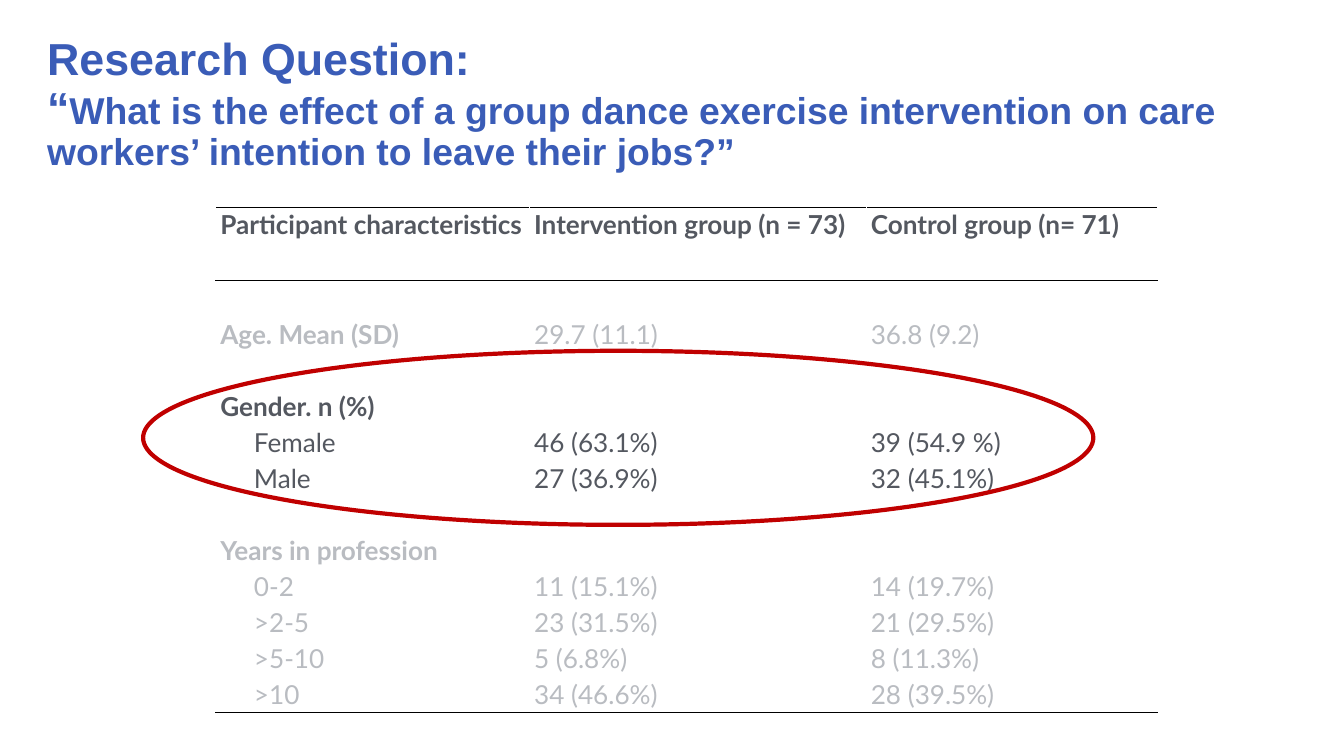
from dataclasses import dataclass

from lxml.etree import SubElement
from pptx import Presentation
from pptx.dml.color import RGBColor
from pptx.enum.shapes import MSO_SHAPE
from pptx.enum.text import MSO_ANCHOR, MSO_AUTO_SIZE, PP_ALIGN
from pptx.oxml.ns import qn
from pptx.util import Inches, Pt

BLUE = RGBColor(0x3A, 0x5C, 0xB7)
DARK = RGBColor(0x54, 0x58, 0x60)
FADED = RGBColor(0xB9, 0xBC, 0xC1)
RED = RGBColor(0xC0, 0x00, 0x00)
BLACK = RGBColor(0x00, 0x00, 0x00)

COL_WIDTHS = (4.67, 5.01, 4.33)
HEADER_HEIGHT, ROW_HEIGHT = 1.09, 0.536


@dataclass
class Row:
    label: str = ""
    intervention: str = ""
    control: str = ""
    color: RGBColor = FADED
    heading: bool = False
    indent: float = 0


ROWS = [
    Row("Participant characteristics", "Intervention group (n = 73)",
        "Control group (n= 71)", DARK, True),
    Row(),
    Row("Age. Mean (SD)", "29.7 (11.1)", "36.8 (9.2)", heading=True),
    Row(),
    Row("Gender. n (%)", color=DARK, heading=True),
    Row("Female", "46 (63.1%)", "39 (54.9 %)", DARK, indent=0.5),
    Row("Male", "27 (36.9%)", "32 (45.1%)", DARK, indent=0.5),
    Row(),
    Row("Years in profession", heading=True),
    Row("0-2", "11 (15.1%)", "14 (19.7%)", indent=0.5),
    Row(">2-5", "23 (31.5%)", "21 (29.5%)", indent=0.5),
    Row(">5-10", "5 (6.8%)", "8 (11.3%)", indent=0.5),
    Row(">10", "34 (46.6%)", "28 (39.5%)", indent=0.5),
]


def set_font(font, color: RGBColor, **values) -> None:
    for name, value in values.items():
        setattr(font, name, value)
    font.color.rgb = color


def add_border(cell, tag: str) -> None:
    ln = SubElement(cell._tc.get_or_add_tcPr(), qn(tag), w=str(Pt(1)))
    fill = SubElement(ln, qn("a:solidFill"))
    SubElement(fill, qn("a:srgbClr"), val=str(BLACK))


def fill_cell(cell, text: str, row: Row, bold: bool, indent: float) -> None:
    margins = {"margin_left": 0.07, "margin_right": 0.07,
               "margin_top": 0, "margin_bottom": 0}
    for name, value in margins.items():
        setattr(cell, name, Inches(value))
    cell.fill.background()
    p = cell.text_frame.paragraphs[0]
    p.line_spacing = 1.07
    p.space_after = Pt(8)
    if indent:
        p._p.get_or_add_pPr().set("marL", str(Inches(indent)))
    font = {"name": "Lato", "size": Pt(28), "bold": bold}
    if text:
        r = p.add_run()
        r.text = text
        set_font(r.font, row.color, **font)
    else:
        set_font(p.font, row.color, **font)
        SubElement(p._p, qn("a:endParaRPr"), sz="2800")


def add_title(s) -> None:
    sp = s.shapes.title
    sp.left, sp.top, sp.width, sp.height = map(Inches, (0.6, 0, 18.81, 3.14))
    tf = sp.text_frame
    tf.auto_size = MSO_AUTO_SIZE.NONE
    tf.vertical_anchor = MSO_ANCHOR.MIDDLE
    tf.word_wrap = True
    p = tf.paragraphs[0]
    p.alignment = PP_ALIGN.LEFT
    p.line_spacing = 0.9
    question = ("What is the effect of a group dance exercise intervention "
                "on care workers’ intention to leave their jobs?”")
    for text, size in (("Research Question:", 48), ("“", 48), (question, 40)):
        if text == "“":
            p.add_line_break()
        r = p.add_run()
        r.text = text
        set_font(r.font, BLUE, name="Arial", size=Pt(size), bold=True)


def add_characteristics(s) -> None:
    last = len(ROWS) - 1
    height = HEADER_HEIGHT + last * ROW_HEIGHT
    table = s.shapes.add_table(len(ROWS), len(COL_WIDTHS), Inches(3.21), Inches(3.08),
                               Inches(sum(COL_WIDTHS)), Inches(height)).table
    table.first_row = table.horz_banding = False
    for col, width in zip(table.columns, COL_WIDTHS):
        col.width = Inches(width)
    for i, row in enumerate(ROWS):
        table.rows[i].height = Inches(ROW_HEIGHT if i else HEADER_HEIGHT)
        for j, text in enumerate((row.label, row.intervention, row.control)):
            cell = table.cell(i, j)
            if i in (0, 1):
                add_border(cell, "a:lnT")
            if i in (0, last):
                add_border(cell, "a:lnB")
            fill_cell(cell, text, row, row.heading and (j == 0 or i == 0),
                      0 if j else row.indent)


def add_highlight(s) -> None:
    sp = s.shapes.add_shape(MSO_SHAPE.OVAL, *map(Inches, (2.13, 5.22, 14.14, 2.59)))
    sp.shadow.inherit = False
    sp.fill.background()
    sp.line.color.rgb = RED
    sp.line.width = Pt(4.5)


def main() -> None:
    """Build the slide of participant characteristics with gender circled."""
    prs = Presentation()
    prs.slide_width, prs.slide_height = Inches(20), Inches(11.25)
    s = prs.slides.add_slide(prs.slide_layouts[5])
    add_title(s)
    add_characteristics(s)
    add_highlight(s)
    prs.save("out.pptx")


if __name__ == "__main__":
    main()
